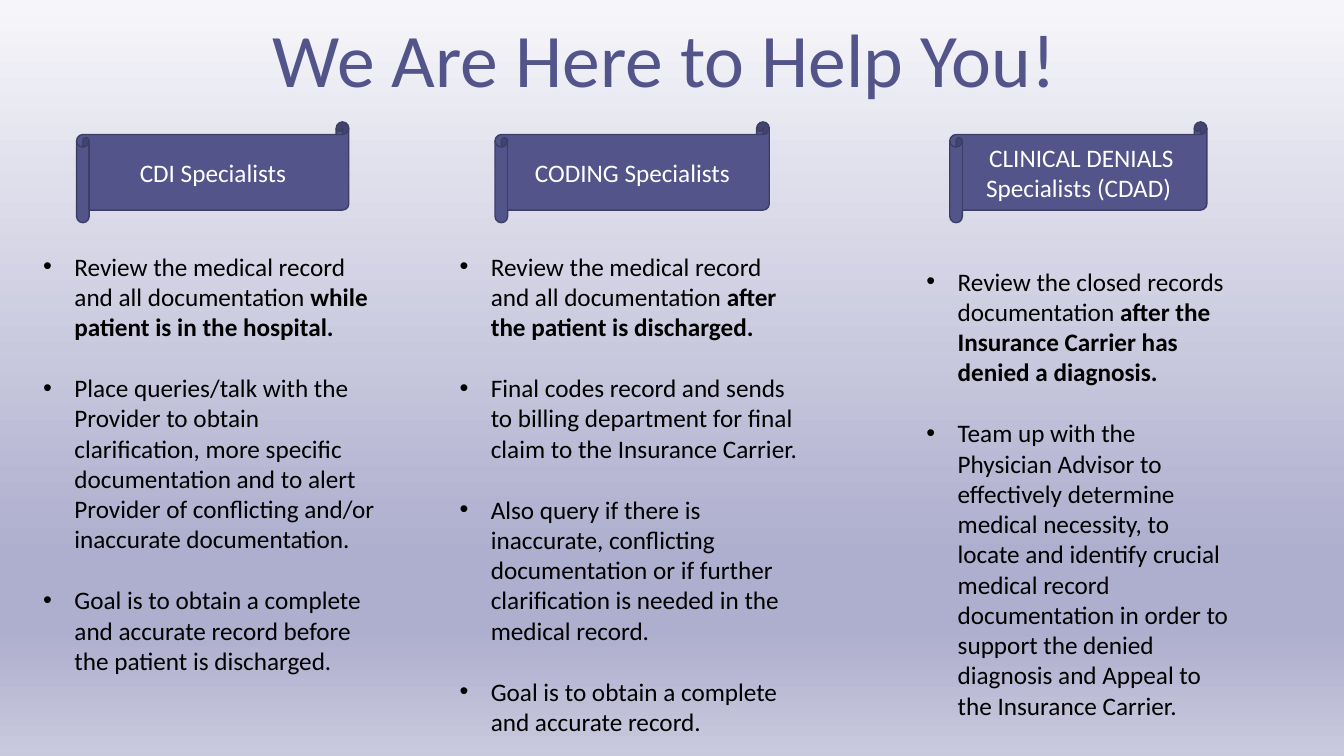
import pptx
import pptx.util
import pptx.dml.color
import pptx.enum.shapes
import pptx.enum.text
import pptx.oxml
import pptx.oxml.ns
import lxml.etree

Inches, Pt = pptx.util.Inches, pptx.util.Pt
RGBColor = pptx.dml.color.RGBColor
ALIGN = pptx.enum.text.PP_ALIGN
ANCHOR = pptx.enum.text.MSO_ANCHOR
AUTO_SIZE = pptx.enum.text.MSO_AUTO_SIZE
qn = pptx.oxml.ns.qn

INDIGO = RGBColor(0x53, 0x54, 0x8A)
DARK_INDIGO = RGBColor(0x3D, 0x3E, 0x66)
WHITE = RGBColor(0xFF, 0xFF, 0xFF)
BLACK = RGBColor(0, 0, 0)
BACKGROUND_STOPS = [
    (0, RGBColor(0xF6, 0xF6, 0xFA)),
    (74, RGBColor(0xAE, 0xAE, 0xCE)),
    (83, RGBColor(0xAE, 0xAE, 0xCE)),
    (100, RGBColor(0xC9, 0xC9, 0xDE)),
]
FONT = "Calibri"
BODY_SIZE = 18
LINE_HEIGHT = 22  # points, one blank line between bullets
INDENT = 0.31
BANNER_TOP, BANNER_HEIGHT = 1.21, 1

TITLE = "We Are Here to Help You!"
# Each bullet is a list of (text, bold) runs; boxes are left, top, width, height.
TEAMS = [
    {
        "banner": ["CDI Specialists "],
        "banner_span": (0.76, 2.7),
        "box": (0.33, 2.44, 3.55, 4.34),
        "bullets": [
            [("Review the medical record and all documentation ", False),
             ("while patient is in the hospital.", True)],
            [("Place queries/talk with the Provider to obtain clarification, more specific "
              "documentation and to alert Provider of conflicting and/or inaccurate "
              "documentation.", False)],
            [("Goal is to obtain a complete and accurate record before the patient is "
              "discharged.", False)],
        ],
    },
    {
        "banner": ["CODING Specialists "],
        "banner_span": (4.91, 2.72),
        "box": (4.46, 2.44, 3.63, 4.95),
        "bullets": [
            [("Review the medical record and all documentation ", False),
             ("after the patient is discharged.", True)],
            [("Final codes record and sends to billing department for final claim to the "
              "Insurance Carrier.", False)],
            [("Also query if there is inaccurate, conflicting documentation or if further "
              "clarification is needed in the medical record.", False)],
            [("Goal is to obtain a complete and accurate record.", False)],
        ],
    },
    {
        "banner": ["CLINICAL DENIALS", "Specialists (CDAD) "],
        "banner_span": (9.42, 2.55),
        "box": (9.09, 2.59, 3.21, 4.64),
        "bullets": [
            [("Review the closed records documentation ", False),
             ("after the Insurance Carrier has denied a diagnosis.", True)],
            [("Team up with the Physician Advisor to effectively determine medical "
              "necessity, to locate and identify crucial medical record documentation in "
              "order to support the denied diagnosis and Appeal to the Insurance Carrier.",
              False)],
        ],
    },
]


def paint_background(slide):
    fill = slide.background.fill
    fill.gradient()
    fill.gradient_angle = 270
    stop_list = next(slide.element.iter(qn("a:gsLst")))
    for stop in list(stop_list):
        stop_list.remove(stop)
    for percent, color in BACKGROUND_STOPS:
        stop = lxml.etree.SubElement(stop_list, qn("a:gs"), pos=str(percent * 1000))
        lxml.etree.SubElement(stop, qn("a:srgbClr"), val=str(color))


def add_run(paragraph, text, size, color, bold=False):
    run = paragraph.add_run()
    run.text = text
    run.font.name = FONT
    run.font.size = Pt(size)
    run.font.bold = bold
    run.font.color.rgb = color


def next_paragraph(frame, index):
    return frame.add_paragraph() if index else frame.paragraphs[0]


def set_title(slide):
    title = slide.shapes.title
    title.left, title.top = Inches(2.56), Inches(0.07)
    title.width, title.height = Inches(8.06), Inches(1.01)
    frame = title.text_frame
    frame.word_wrap = False
    frame.auto_size = AUTO_SIZE.NONE
    frame.vertical_anchor = ANCHOR.TOP
    paragraph = frame.paragraphs[0]
    paragraph.alignment = ALIGN.CENTER
    add_run(paragraph, TITLE, 54, INDIGO)


def add_banner(slide, lines, span):
    left, width = span
    banner = slide.shapes.add_shape(
        pptx.enum.shapes.MSO_SHAPE.HORIZONTAL_SCROLL,
        Inches(left), Inches(BANNER_TOP), Inches(width), Inches(BANNER_HEIGHT))
    banner.shadow.inherit = False
    banner.fill.solid()
    banner.fill.fore_color.rgb = INDIGO
    banner.line.color.rgb = DARK_INDIGO
    banner.line.width = Pt(1)
    frame = banner.text_frame
    frame.vertical_anchor = ANCHOR.MIDDLE
    for index, line in enumerate(lines):
        paragraph = next_paragraph(frame, index)
        paragraph.alignment = ALIGN.CENTER
        add_run(paragraph, line, BODY_SIZE, WHITE)


def add_bullets(slide, bullets, box):
    frame = slide.shapes.add_textbox(*map(Inches, box)).text_frame
    frame.word_wrap = True
    for index, runs in enumerate(bullets):
        paragraph = next_paragraph(frame, index)
        if index:
            paragraph.space_before = Pt(LINE_HEIGHT)
        properties = paragraph._p.get_or_add_pPr()
        properties.set("marL", str(Inches(INDENT)))
        properties.set("indent", str(-Inches(INDENT)))
        lxml.etree.SubElement(properties, qn("a:buFont"), typeface="Arial")
        lxml.etree.SubElement(properties, qn("a:buChar"), char="•")
        for text, bold in runs:
            add_run(paragraph, text, BODY_SIZE, BLACK, bold)


def main():
    presentation = pptx.Presentation()
    presentation.slide_width = Inches(13.33)
    presentation.slide_height = Inches(7.5)
    slide = presentation.slides.add_slide(presentation.slide_layouts[5])
    paint_background(slide)
    set_title(slide)
    for team in TEAMS:
        add_banner(slide, team["banner"], team["banner_span"])
        add_bullets(slide, team["bullets"], team["box"])
    presentation.save("out.pptx")


if __name__ == "__main__":
    main()
